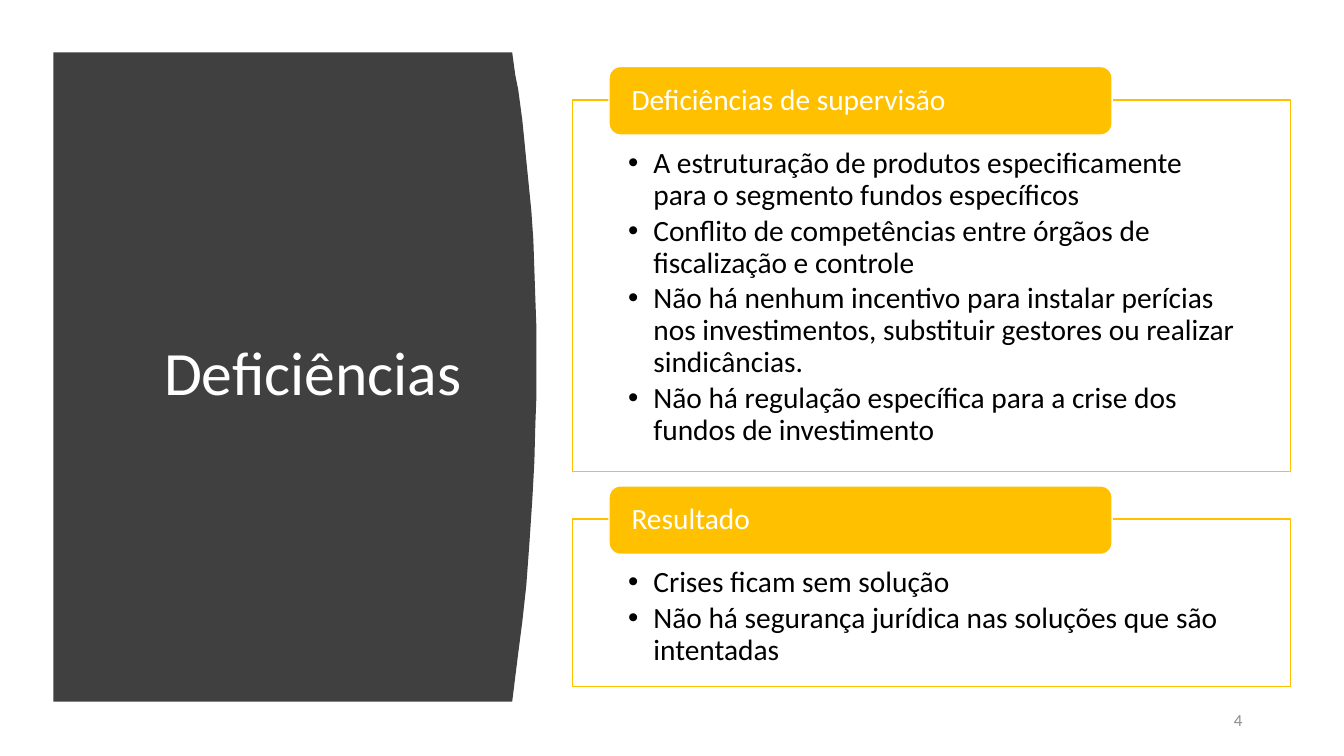
from lxml import etree
from pptx import Presentation
from pptx.dml.color import RGBColor
from pptx.enum import shapes, text
from pptx.oxml import ns
from pptx.util import Inches, Pt

CHARCOAL = RGBColor(0x40, 0x40, 0x40)
AMBER = RGBColor(0xFF, 0xC0, 0x00)
WHITE = RGBColor(0xFF, 0xFF, 0xFF)
BLACK = RGBColor(0x00, 0x00, 0x00)
GREY = RGBColor(0x8C, 0x8C, 0x8C)

# Right edge of the dark panel, from top to bottom
CURVE = [
    (5.08, 0.52), (5.11, 0.74), (5.14, 0.89), (5.18, 1.19), (5.21, 1.49),
    (5.24, 1.79), (5.27, 2.09), (5.29, 2.38), (5.3, 2.68), (5.31, 2.97),
    (5.32, 3.25), (5.32, 3.94), (5.31, 4.2), (5.3, 4.58), (5.28, 4.95),
    (5.25, 5.4), (5.22, 5.81), (5.18, 6.17), (5.14, 6.48), (5.11, 6.72),
    (5.08, 6.96),
]
PANEL_LEFT, PANEL_TOP, PANEL_BOTTOM = 0.53, 0.52, 6.96

# Heading, top and height of the frame, bullets
SECTIONS = [
    ("Deficiências de supervisão", 0.99, 3.69, [
        "A estruturação de produtos especificamente para o segmento fundos específicos",
        "Conflito de competências entre órgãos de fiscalização e controle",
        "Não há nenhum incentivo para instalar perícias nos investimentos, "
        "substituir gestores ou realizar sindicâncias.",
        "Não há regulação específica para a crise dos fundos de investimento",
    ]),
    ("Resultado", 5.15, 1.66, [
        "Crises ficam sem solução",
        "Não há segurança jurídica nas soluções que são intentadas",
    ]),
]


def write(box, lines, size, color, align=text.PP_ALIGN.LEFT,
          anchor=text.MSO_ANCHOR.MIDDLE, insets=(0.1, 0.05, 0.1, 0.05), bullets=False):
    frame = box.text_frame
    left, top, right, bottom = map(Inches, insets)
    settings = {"word_wrap": True, "vertical_anchor": anchor, "margin_left": left,
                "margin_top": top, "margin_right": right, "margin_bottom": bottom}
    for name, value in settings.items():
        setattr(frame, name, value)
    for index, line in enumerate(lines):
        para = frame.add_paragraph() if index else frame.paragraphs[0]
        para.alignment = align
        para.line_spacing = 0.9
        if bullets:
            para.space_after = Pt(3)
            properties = para._p.get_or_add_pPr()
            properties.set("marL", str(Inches(0.25)))
            properties.set("indent", str(Inches(-0.25)))
            etree.SubElement(properties, ns.qn("a:buFont")).set("typeface", "Arial")
            etree.SubElement(properties, ns.qn("a:buChar")).set("char", "•")
        span = para.add_run()
        span.text = line
        span.font.name = "Calibri"
        span.font.size = Pt(size)
        span.font.color.rgb = color


def paint(shape, fill, line):
    shape.shadow.inherit = False
    shape.fill.solid()
    shape.fill.fore_color.rgb = fill
    shape.line.color.rgb = line
    shape.line.width = Pt(1)


deck = Presentation()
deck.slide_width, deck.slide_height = Inches(13.33), Inches(7.5)
page = deck.slides.add_slide(deck.slide_layouts[6])

outline = page.shapes.build_freeform(Inches(PANEL_LEFT), Inches(PANEL_TOP))
edge = CURVE + [(PANEL_LEFT, PANEL_BOTTOM)]
outline.add_line_segments([(Inches(x), Inches(y)) for x, y in edge], close=True)
panel = outline.convert_to_shape()
paint(panel, CHARCOAL, CHARCOAL)
panel.line.fill.background()

title = page.shapes.add_textbox(Inches(0.94), Inches(1.11), Inches(3.74), Inches(5.24))
write(title, ["Deficiências"], 44, WHITE, text.PP_ALIGN.RIGHT)

number = page.shapes.add_textbox(Inches(11.73), Inches(6.95), Inches(0.69), Inches(0.4))
write(number, ["4"], 12, GREY, text.PP_ALIGN.RIGHT)

for heading, top, height, bullets in SECTIONS:
    frame_box = page.shapes.add_shape(
        shapes.MSO_SHAPE.RECTANGLE, Inches(5.68), Inches(top), Inches(7.12), Inches(height))
    paint(frame_box, WHITE, AMBER)
    write(frame_box, bullets, 21, BLACK, anchor=text.MSO_ANCHOR.TOP,
          insets=(0.55, 0.48, 0.55, 0.16), bullets=True)

    tab = page.shapes.add_shape(
        shapes.MSO_SHAPE.ROUNDED_RECTANGLE,
        Inches(6.04), Inches(top - 0.33), Inches(4.99), Inches(0.68))
    paint(tab, AMBER, WHITE)
    write(tab, [heading], 21, WHITE, insets=(0.19, 0, 0.19, 0))

deck.save("out.pptx")
